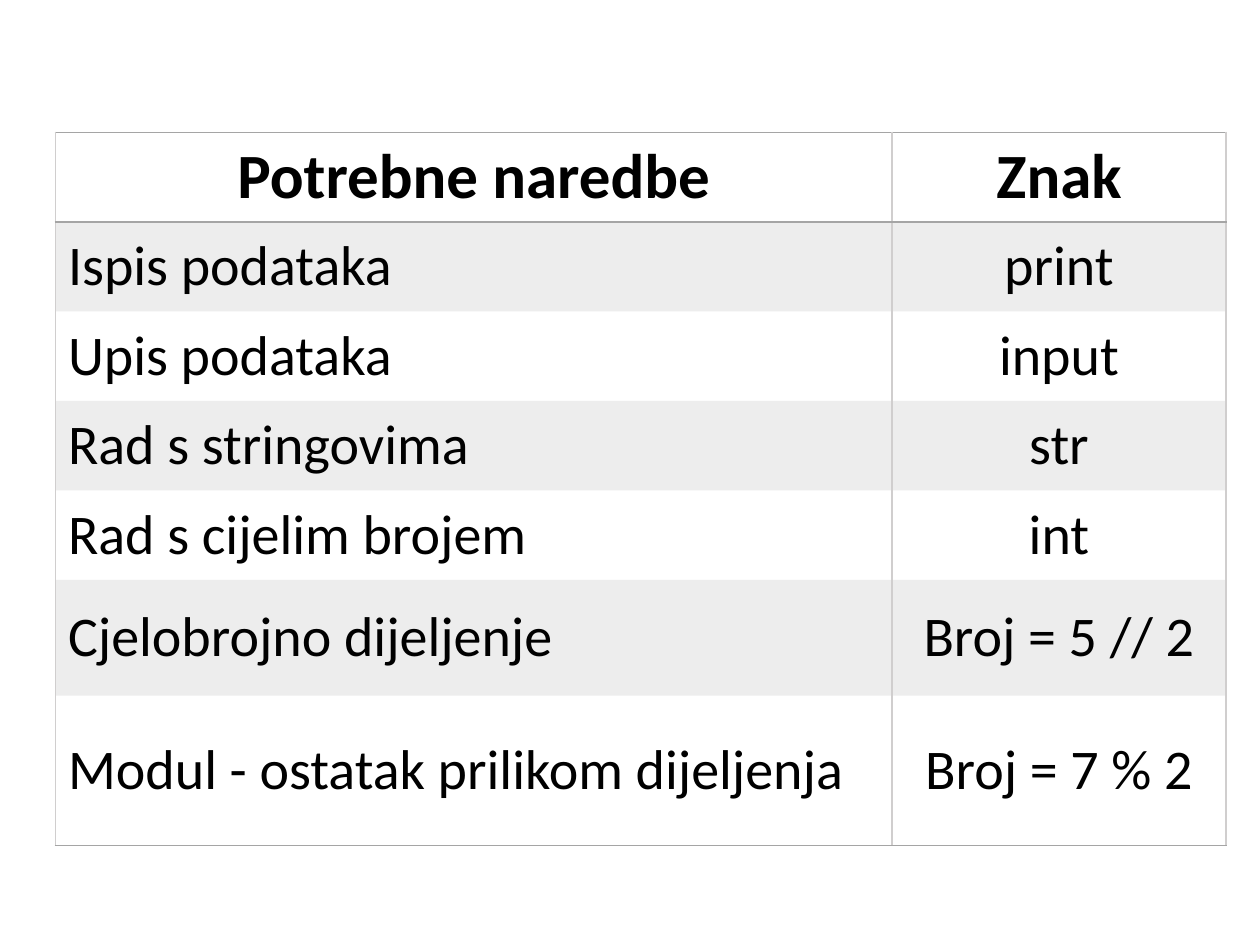
from lxml import etree
from pptx import Presentation
from pptx.dml.color import RGBColor
from pptx.enum import text
from pptx.oxml.ns import qn
from pptx.util import Inches, Pt

COLORS = {"text": "000000", "side": "D0CECE", "rule": "A5A5A5", "band": "A5A5A5"}
BAND_ALPHA = 20
COLUMN_WIDTHS = [6.64, 2.65]
ROW_HEIGHTS = [0.71] * 5 + [0.92, 1.19]
ROWS = [
    ("Potrebne naredbe", "Znak"),
    ("Ispis podataka", "print"),
    ("Upis podataka", "input"),
    ("Rad s stringovima", "str"),
    ("Rad s cijelim brojem", "int"),
    ("Cjelobrojno dijeljenje", "Broj = 5 // 2"),
    ("Modul - ostatak prilikom dijeljenja", "Broj = 7 % 2"),
]


def set_border(cell, side, color):
    """Draw a one-point border on a cell side, or none without a color."""
    properties = cell._tc.get_or_add_tcPr()
    line = etree.SubElement(properties, qn(f"a:ln{side}"), w=str(Pt(1)))
    if color:
        fill = etree.SubElement(line, qn("a:solidFill"))
        etree.SubElement(fill, qn("a:srgbClr"), val=color)
    else:
        etree.SubElement(line, qn("a:noFill"))


def set_fill(cell, banded):
    """Give a cell the translucent band color or no fill."""
    if not banded:
        cell.fill.background()
        return
    cell.fill.solid()
    cell.fill.fore_color.rgb = RGBColor.from_string(COLORS["band"])
    color = cell._tc.tcPr.find(qn("a:solidFill")).find(qn("a:srgbClr"))
    etree.SubElement(color, qn("a:alpha"), val=str(BAND_ALPHA * 1000))


def fill_text(cell, content, header, centered):
    """Write and format the text of a cell."""
    cell.text_frame.text = content
    anchor = text.MSO_ANCHOR.TOP if header else text.MSO_ANCHOR.MIDDLE
    cell.vertical_anchor = anchor
    paragraph = cell.text_frame.paragraphs[0]
    paragraph.alignment = text.PP_ALIGN.CENTER if centered else text.PP_ALIGN.LEFT
    font = paragraph.runs[0].font
    font.name = "Calibri"
    font.size = Pt(36 if header else 32)
    font.bold = header
    font.color.rgb = RGBColor.from_string(COLORS["text"])


def add_command_table(slide):
    """Add the table of commands and their symbols."""
    frame = slide.shapes.add_table(
        len(ROWS), len(COLUMN_WIDTHS), Inches(0.44), Inches(1.05),
        Inches(sum(COLUMN_WIDTHS)), Inches(sum(ROW_HEIGHTS)))
    table = frame.table
    table.first_row = True
    table.horz_banding = False
    for column, width in zip(table.columns, COLUMN_WIDTHS):
        column.width = Inches(width)
    for row, height in zip(table.rows, ROW_HEIGHTS):
        row.height = Inches(height)
    last = len(ROWS) - 1
    for row_index, values in enumerate(ROWS):
        header = row_index == 0
        top = COLORS["rule"] if row_index <= 1 else None
        bottom = COLORS["rule"] if row_index in (0, last) else None
        borders = {"L": COLORS["side"], "R": COLORS["side"], "T": top, "B": bottom}
        for column_index, content in enumerate(values):
            cell = table.cell(row_index, column_index)
            fill_text(cell, content, header, header or column_index == 1)
            for side, color in borders.items():
                set_border(cell, side, color)
            set_fill(cell, row_index % 2 == 1)


def main():
    """Build and save the presentation."""
    presentation = Presentation()
    presentation.slide_width = Inches(10)
    presentation.slide_height = Inches(7.5)
    slide = presentation.slides.add_slide(presentation.slide_layouts[6])
    add_command_table(slide)
    presentation.save("out.pptx")


if __name__ == "__main__":
    main()
